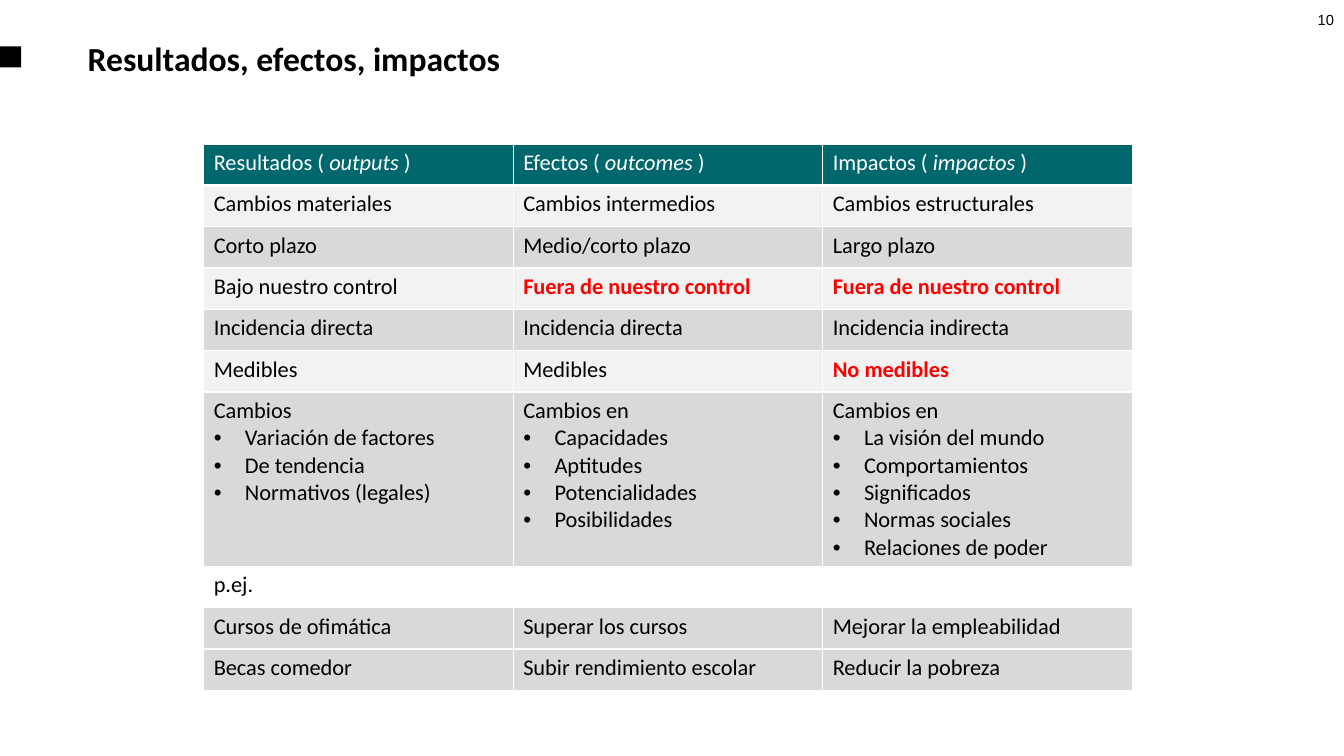
from lxml import etree
from pptx import Presentation
from pptx.dml.color import RGBColor
from pptx.enum.shapes import MSO_SHAPE
from pptx.enum.text import MSO_ANCHOR, PP_ALIGN
from pptx.oxml.ns import qn
from pptx.util import Inches, Pt

RECTANGLE = MSO_SHAPE.RECTANGLE
MIDDLE = MSO_ANCHOR.MIDDLE
LEFT, RIGHT = PP_ALIGN.LEFT, PP_ALIGN.RIGHT
TITLE_ONLY = 5

BLACK, WHITE, RED = "000000", "FFFFFF", "FF0000"
TEAL, LIGHT, GREY = "00676C", "F2F2F2", "D9D9D9"

HEADINGS = [("Resultados", "outputs"), ("Efectos", "outcomes"), ("Impactos", "impactos")]
ROWS = [
    (LIGHT, ["Cambios materiales", "Cambios intermedios", "Cambios estructurales"]),
    (GREY, ["Corto plazo", "Medio/corto plazo", "Largo plazo"]),
    (LIGHT, ["Bajo nuestro control", "Fuera de nuestro control", "Fuera de nuestro control"]),
    (GREY, ["Incidencia directa", "Incidencia directa", "Incidencia indirecta"]),
    (LIGHT, ["Medibles", "Medibles", "No medibles"]),
    (GREY, [
        "Cambios\nVariación de factores\nDe tendencia\nNormativos (legales)",
        "Cambios en\nCapacidades\nAptitudes\nPotencialidades\nPosibilidades",
        "Cambios en\nLa visión del mundo\nComportamientos\nSignificados\n"
        "Normas sociales\nRelaciones de poder",
    ]),
    (None, ["p.ej.", "", ""]),
    (GREY, ["Cursos de ofimática", "Superar los cursos", "Mejorar la empleabilidad"]),
    (GREY, ["Becas comedor", "Subir rendimiento escolar", "Reducir la pobreza"]),
]
WARNINGS = {"Fuera de nuestro control", "No medibles"}
ROW_HEIGHT, LIST_ROW_HEIGHT = 0.41, 1.73


def color(value):
    return RGBColor.from_string(value)


def style(paragraph, size, hue=BLACK, bold=False, name="Calibri"):
    font = paragraph.font
    font.name, font.size, font.bold = name, Pt(size), bold
    font.color.rgb = color(hue)


def add_bullet(paragraph):
    properties = paragraph._p.get_or_add_pPr()
    properties.set("marL", str(Inches(0.31)))
    properties.set("indent", str(-Inches(0.31)))
    etree.SubElement(properties, qn("a:buFont"), typeface="Arial")
    etree.SubElement(properties, qn("a:buChar"), char="•")


def add_borders(cell, bottom):
    properties = cell._tc.get_or_add_tcPr()
    for side, width in (("L", 1), ("R", 1), ("T", 1), ("B", bottom)):
        line = etree.SubElement(properties, qn(f"a:ln{side}"), w=str(Pt(width)))
        fill = etree.SubElement(line, qn("a:solidFill"))
        etree.SubElement(fill, qn("a:srgbClr"), val=WHITE)


def paint(cell, fill, bottom=1):
    add_borders(cell, bottom)
    if fill:
        cell.fill.solid()
        cell.fill.fore_color.rgb = color(fill)
    else:
        cell.fill.background()


def fill_heading(cell, term, english):
    paint(cell, TEAL, bottom=3)
    paragraph = cell.text_frame.paragraphs[0]
    for text, italic in ((f"{term} ( ", False), (f"{english} ", True), (")", False)):
        span = paragraph.add_run()
        span.text, span.font.italic = text, italic
    style(paragraph, 16, WHITE)


def fill_cell(cell, text, fill):
    paint(cell, fill)
    cell.text = text
    warning = text in WARNINGS
    if warning:
        cell.margin_right = 0
    for index, paragraph in enumerate(cell.text_frame.paragraphs):
        if index:
            add_bullet(paragraph)
        style(paragraph, 16, RED if warning else BLACK, warning)


def add_marker(page, left, top, side):
    marker = page.shapes.add_shape(
        RECTANGLE, Inches(left), Inches(top), Inches(side), Inches(side))
    marker.shadow.inherit = False
    marker.fill.solid()
    marker.fill.fore_color.rgb = color(BLACK)
    marker.line.fill.background()


def add_page_number(page, left, top, width, height):
    box = page.shapes.add_textbox(Inches(left), Inches(top), Inches(width), Inches(height))
    box.text_frame.word_wrap = True
    box.text_frame.margin_right = 0
    paragraph = box.text_frame.paragraphs[0]
    paragraph.text = "10"
    paragraph.alignment = RIGHT
    style(paragraph, 10.5, name="Arial")


def place_title(page, left, top, width, height):
    title = page.shapes.title
    title.left, title.top = Inches(left), Inches(top)
    title.width, title.height = Inches(width), Inches(height)
    title.text_frame.text = "Resultados, efectos, impactos"
    title.text_frame.vertical_anchor = MIDDLE
    paragraph = title.text_frame.paragraphs[0]
    paragraph.alignment = LEFT
    style(paragraph, 24, bold=True)


def add_comparison(page, left, top, width):
    heights = [ROW_HEIGHT] + [
        LIST_ROW_HEIGHT if "\n" in texts[0] else ROW_HEIGHT for _, texts in ROWS]
    table = page.shapes.add_table(
        len(heights), len(HEADINGS),
        Inches(left), Inches(top), Inches(width), Inches(sum(heights))).table
    table.horz_banding = False
    for row, height in zip(table.rows, heights):
        row.height = Inches(height)
    for column, heading in enumerate(HEADINGS):
        fill_heading(table.cell(0, column), *heading)
    for row, (fill, texts) in enumerate(ROWS, start=1):
        for column, text in enumerate(texts):
            fill_cell(table.cell(row, column), text, fill)


def main():
    deck = Presentation()
    deck.slide_width, deck.slide_height = Inches(13.33), Inches(7.5)
    page = deck.slides.add_slide(deck.slide_layouts[TITLE_ONLY])
    add_marker(page, 0, 0.46, 0.21)
    add_page_number(page, 12.79, 0.06, 0.44, 0.4)
    place_title(page, 0.77, 0.25, 11.81, 0.66)
    add_comparison(page, 2.02, 1.43, 9.21)
    deck.save("out.pptx")


if __name__ == "__main__":
    main()
